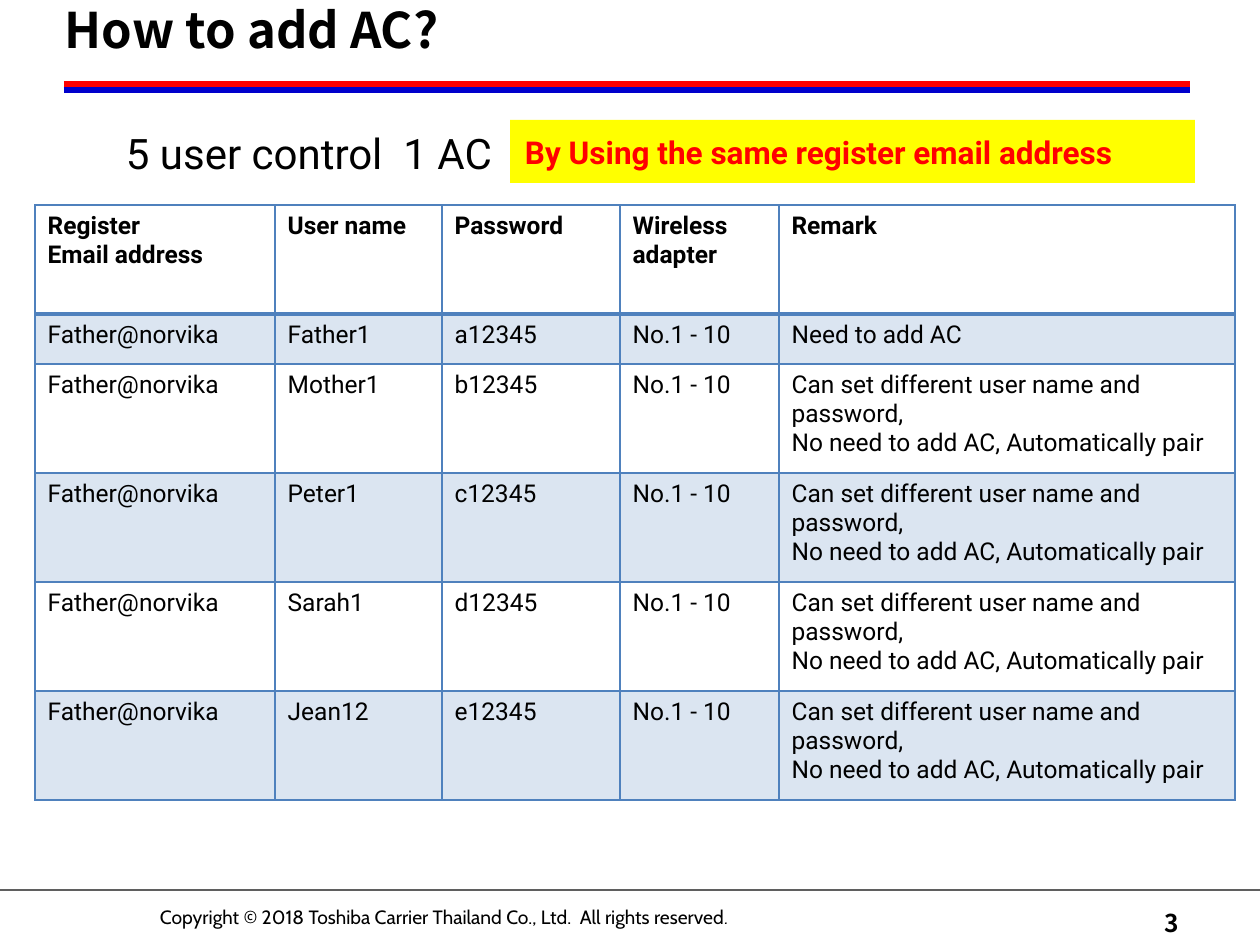
from dataclasses import dataclass

from lxml import etree
from pptx import Presentation
from pptx.dml.color import RGBColor
from pptx.enum.shapes import MSO_CONNECTOR, MSO_SHAPE
from pptx.enum.text import MSO_ANCHOR, PP_ALIGN
from pptx.oxml.ns import qn
from pptx.util import Emu, Pt

LEFT, RIGHT = PP_ALIGN.LEFT, PP_ALIGN.RIGHT
TOP, MIDDLE = MSO_ANCHOR.TOP, MSO_ANCHOR.MIDDLE
STRAIGHT = MSO_CONNECTOR.STRAIGHT
RECTANGLE = MSO_SHAPE.RECTANGLE
TITLE_ONLY = 5
PX_PER_INCH = 126


@dataclass(frozen=True)
class Theme:
    ink: str = "000000"
    red: str = "FF0000"
    blue: str = "0000CC"
    yellow: str = "FFFF00"
    grid: str = "4F81BD"
    footer_line: str = "5F5F5F"
    heading_font: str = "Noto Sans CJK JP"
    body_font: str = "Roboto"
    footer_font: str = "Cabin"
    title_size: int = 28
    lead_size: int = 24
    banner_size: int = 18
    table_size: int = 14
    page_size: int = 14
    footer_size: int = 11
    full_stop_size: int = 10
    band_alpha: int = 20


THEME = Theme()

HEADER = ["Register \nEmail address", "User name", "Password", "Wireless adapter", "Remark"]
EMAIL = "Father@norvika"
ADAPTERS = "No.1 - 10"
PAIRING = ("Can set different user name and password,\n"
           "No need to add AC, Automatically pair")
USERS = [
    ("Father1", "a12345", "Need to add AC"),
    ("Mother1", "b12345", PAIRING),
    ("Peter1", "c12345", PAIRING),
    ("Sarah1", "d12345", PAIRING),
    ("Jean12", "e12345", PAIRING),
]
COLUMN_WIDTHS = [240, 167, 178, 159, 456]
ROW_HEIGHTS = [109, 50, 109, 109, 109, 109]


def px(length):
    return Emu(round(length * 914400 / PX_PER_INCH))


def box(*lengths):
    return [px(length) for length in lengths]


def style_font(font, family, size, color=THEME.ink, bold=False):
    font.name = family
    font.size = Pt(size)
    font.bold = bold
    font.color.rgb = RGBColor.from_string(color)


def set_margins(frame, horizontal, vertical):
    frame.margin_left = frame.margin_right = px(horizontal)
    frame.margin_top = frame.margin_bottom = px(vertical)


def write(frame, text, family, size, color=THEME.ink, bold=False,
          align=LEFT, margins=(0, 0), wrap=True):
    frame.word_wrap = wrap
    frame.vertical_anchor = MIDDLE
    set_margins(frame, *margins)
    paragraph = frame.paragraphs[0]
    paragraph.text = text
    paragraph.alignment = align
    style_font(paragraph.font, family, size, color, bold)
    return paragraph


def add_text(slide, bounds, *args, **options):
    label = slide.shapes.add_textbox(*box(*bounds))
    return write(label.text_frame, *args, **options)


def add_rule(slide, start, end, y, color, width):
    rule = slide.shapes.add_connector(STRAIGHT, *box(start, y, end, y))
    rule.line.color.rgb = RGBColor.from_string(color)
    rule.line.width = Pt(width)
    etree.SubElement(rule._element.spPr, qn("a:effectLst"))


def add_title(slide, text):
    title = slide.shapes.title
    title.left, title.top, title.width, title.height = box(52, 0, 1153, 86)
    frame = title.text_frame
    heading = write(frame, text, THEME.heading_font, THEME.title_size,
                    bold=True, margins=(13, 6))
    frame.vertical_anchor = TOP
    heading.line_spacing = 0.9


def add_banner(slide, text):
    banner = slide.shapes.add_shape(RECTANGLE, *box(510, 120, 685, 63))
    banner.shadow.inherit = False
    banner.fill.solid()
    banner.fill.fore_color.rgb = RGBColor.from_string(THEME.yellow)
    banner.line.fill.background()
    write(banner.text_frame, text, THEME.body_font, THEME.banner_size,
          THEME.red, bold=True, margins=(15, 5))


def set_borders(cell, widths):
    properties = cell._tc.get_or_add_tcPr()
    for side, width in widths.items():
        border = etree.SubElement(properties, qn(f"a:ln{side}"), w=str(Pt(width)))
        fill = etree.SubElement(border, qn("a:solidFill"))
        etree.SubElement(fill, qn("a:srgbClr"), val=THEME.grid)


def shade(cell, banded):
    if not banded:
        cell.fill.background()
        return
    cell.fill.solid()
    cell.fill.fore_color.rgb = RGBColor.from_string(THEME.grid)
    color = cell._tc.tcPr.find(qn("a:solidFill")).find(qn("a:srgbClr"))
    etree.SubElement(color, qn("a:alpha"), val=str(THEME.band_alpha * 1000))


def fill_cell(cell, text, row):
    cell.text = text
    for paragraph in cell.text_frame.paragraphs:
        paragraph.alignment = LEFT
        style_font(paragraph.font, THEME.body_font, THEME.table_size, bold=row == 0)
    set_borders(cell, {"L": 1, "R": 1, "T": 2 if row == 1 else 1, "B": 2 if row == 0 else 1})
    shade(cell, row % 2 == 1)


def add_user_table(slide):
    records = [HEADER] + [[EMAIL, user, password, ADAPTERS, remark]
                          for user, password, remark in USERS]
    bounds = box(35, 205, sum(COLUMN_WIDTHS), sum(ROW_HEIGHTS))
    table = slide.shapes.add_table(len(records), len(HEADER), *bounds).table
    table.horz_banding = False
    for column, width in zip(table.columns, COLUMN_WIDTHS):
        column.width = px(width)
    for row, (record, height) in enumerate(zip(records, ROW_HEIGHTS)):
        table.rows[row].height = px(height)
        for column, text in enumerate(record):
            fill_cell(table.cell(row, column), text, row)


def add_footer(slide):
    add_text(slide, (1124, 901, 55, 44), "3", THEME.heading_font,
             THEME.page_size, bold=True, align=RIGHT)
    add_rule(slide, 0, 1260, 890, THEME.footer_line, 1.5)
    notice = add_text(slide, (160, 890, 701, 53),
                      "Copyright © 2018 Toshiba Carrier Thailand Co., Ltd.  All rights reserved",
                      THEME.footer_font, THEME.footer_size)
    full_stop = notice.add_run()
    full_stop.text = "."
    full_stop.font.size = Pt(THEME.full_stop_size)
    full_stop.font.italic = True


def main():
    deck = Presentation()
    deck.slide_width, deck.slide_height = box(1260, 945)
    slide = deck.slides.add_slide(deck.slide_layouts[TITLE_ONLY])
    for y, color in ((84, THEME.red), (90, THEME.blue)):
        add_rule(slide, 64, 1190, y, color, 3)
    add_footer(slide)
    add_title(slide, "How to add AC?")
    add_user_table(slide)
    add_text(slide, (111, 90, 401, 126), "5 user control  1 AC", THEME.body_font,
             THEME.lead_size, margins=(15, 5), wrap=False)
    add_banner(slide, "By Using the same register email address")
    deck.save("out.pptx")


if __name__ == "__main__":
    main()
